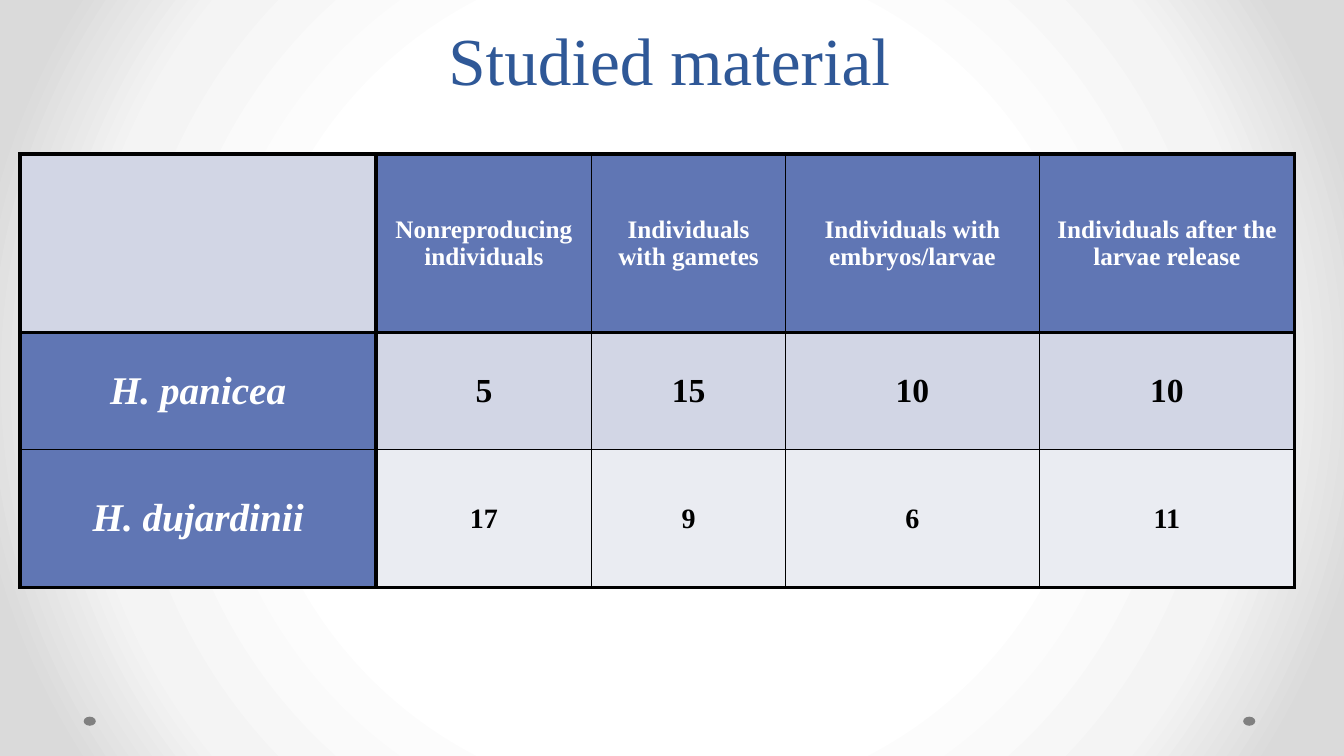
from pptx import Presentation
from pptx.dml.color import RGBColor
from pptx.enum.shapes import MSO_SHAPE
from pptx.enum.text import MSO_ANCHOR, PP_ALIGN
from pptx.oxml import parse_xml
from pptx.oxml.ns import nsdecls
from pptx.util import Emu, Pt

PX = 9144  # one hundredth of an inch
FONT = "Times New Roman"
BLUE, WHITE, BLACK = "6076B4", "FFFFFF", "000000"
BANDS = ["D2D6E5", "D2D6E5", "EAECF2"]
COLUMN_WIDTHS = [353, 214, 192, 252, 253]
ROW_HEIGHTS = [177, 116, 137]
VALUE_SIZES = [18, 24, 20]
ROWS = [
    ["", "Nonreproducing individuals", "Individuals with gametes",
     "Individuals with embryos/larvae", "Individuals after the larvae release"],
    ["H. panicea", "5", "15", "10", "10"],
    ["H. dujardinii", "17", "9", "6", "11"],
]


def px(*lengths):
    return [Emu(length * PX) for length in lengths]


def color(value):
    return RGBColor.from_string(value)


def set_background(page, stops):
    marks = "".join(
        f'<a:gs pos="{position * 1000}"><a:srgbClr val="{value}"/></a:gs>'
        for position, value in stops)
    page.element.cSld.insert(0, parse_xml(
        f'<p:bg {nsdecls("p", "a")}><p:bgPr><a:gradFill rotWithShape="1">'
        f'<a:gsLst>{marks}</a:gsLst><a:path path="circle">'
        '<a:fillToRect l="50000" t="50000" r="50000" b="50000"/></a:path>'
        '</a:gradFill><a:effectLst/></p:bgPr></p:bg>'))


def add_dot(page, left):
    dot = page.shapes.add_shape(MSO_SHAPE.OVAL, *px(left, 711, 12, 9))
    dot.shadow.inherit = False
    dot.fill.solid()
    dot.fill.fore_color.rgb = color("808080")
    dot.line.fill.background()


def write(para, text, size, value, bold=False, italic=False):
    para.alignment = PP_ALIGN.CENTER
    span = para.add_run()
    span.text = text
    span.font.name = FONT
    span.font.size = Pt(size)
    span.font.color.rgb = color(value)
    span.font.bold = bold
    span.font.italic = italic


def set_title(page, text):
    title = page.shapes.title
    title.left, title.top, title.width, title.height = px(214, 29, 900, 74)
    title.text_frame.vertical_anchor = MSO_ANCHOR.BOTTOM
    para = title.text_frame.paragraphs[0]
    para.line_spacing = Pt(58)
    write(para, text, 48, "2F5897")


def set_borders(cell, widths):
    properties = cell._tc.get_or_add_tcPr()
    for side, width in zip("LRTB", widths):
        properties.append(parse_xml(
            f'<a:ln{side} {nsdecls("a")} w="{Pt(width)}"><a:solidFill>'
            f'<a:srgbClr val="{BLACK}"/></a:solidFill></a:ln{side}>'))


def edge_widths(index, count):
    # Heavy lines frame the table and set off its first row and column
    return [3 if edge in (0, 1, count) else 1 for edge in (index, index + 1)]


def add_counts_table(page):
    frame = page.shapes.add_table(
        len(ROWS), len(COLUMN_WIDTHS),
        *px(20, 153, sum(COLUMN_WIDTHS), sum(ROW_HEIGHTS)))
    table = frame.table
    for column, width in zip(table.columns, px(*COLUMN_WIDTHS)):
        column.width = width
    for row, height in zip(table.rows, px(*ROW_HEIGHTS)):
        row.height = height

    for r, texts in enumerate(ROWS):
        for c, text in enumerate(texts):
            cell = table.cell(r, c)
            heading = (r == 0) != (c == 0)
            set_borders(cell, edge_widths(c, len(texts)) + edge_widths(r, len(ROWS)))
            cell.fill.solid()
            cell.fill.fore_color.rgb = color(BLUE if heading else BANDS[r])
            cell.vertical_anchor = MSO_ANCHOR.MIDDLE
            if text:
                write(cell.text_frame.paragraphs[0], text,
                      28 if c == 0 else VALUE_SIZES[r],
                      WHITE if heading else BLACK, bold=True, italic=c == 0)


def main():
    deck = Presentation()
    deck.slide_width, deck.slide_height = px(1333, 750)
    page = deck.slides.add_slide(deck.slide_layouts[5])

    # Backdrop
    set_background(page, [(50, "FFFFFF"), (76, "F4F4F4"), (92, "DADADA")])
    for left in (1233, 83):
        add_dot(page, left)

    # Content
    add_counts_table(page)
    set_title(page, "Studied material")
    deck.save("out.pptx")


if __name__ == "__main__":
    main()
